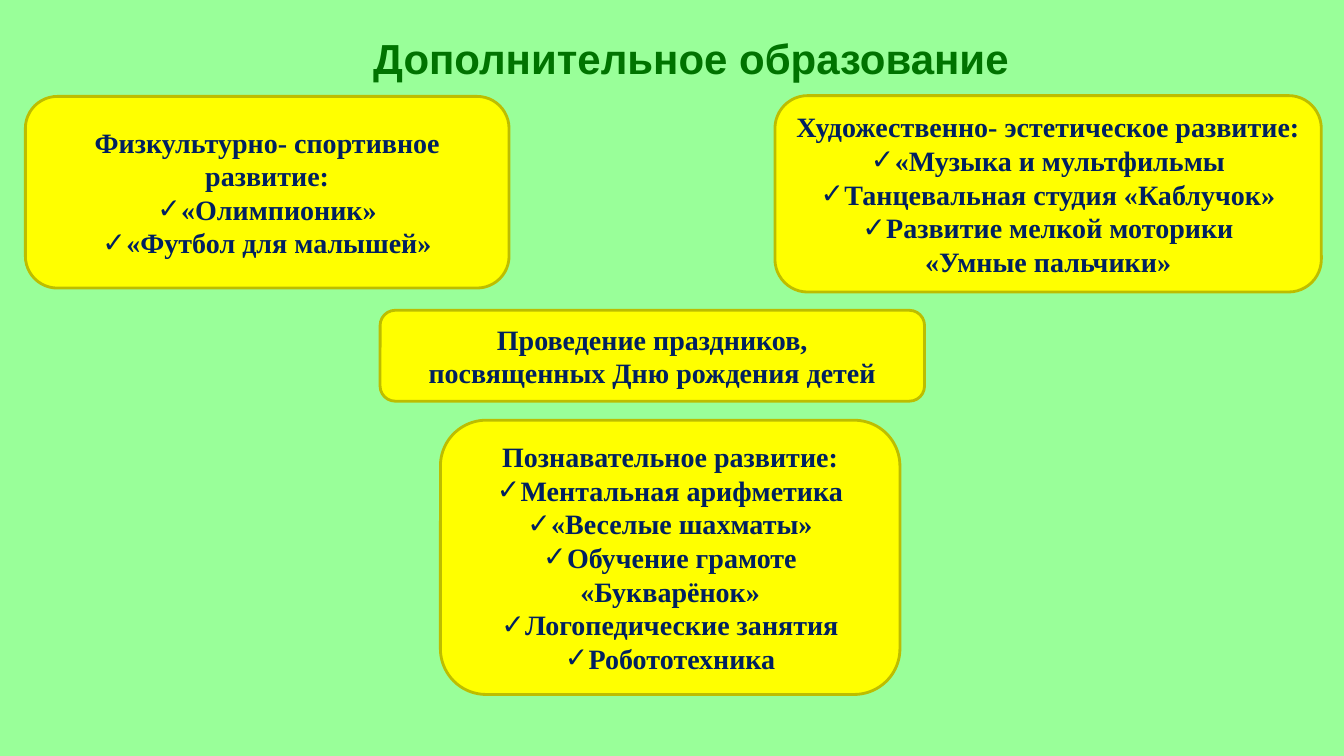
from dataclasses import dataclass

from lxml.etree import SubElement
from pptx import Presentation
from pptx.dml.color import RGBColor
from pptx.enum.shapes import MSO_SHAPE as Preset
from pptx.enum.text import MSO_ANCHOR as Anchor, PP_ALIGN as Align
from pptx.oxml.ns import qn
from pptx.util import Cm, Pt

MINT = RGBColor(0x99, 0xFF, 0x99)
GREEN = RGBColor(0x00, 0x73, 0x00)
YELLOW = RGBColor(0xFF, 0xFF, 0x00)
OLIVE = RGBColor(0xBD, 0xBD, 0x00)
NAVY = RGBColor(0x00, 0x20, 0x60)
CHECK = "✓"


@dataclass(frozen=True)
class Card:
    """A yellow box; lines that start with the check mark are list items."""
    left: float
    top: float
    width: float
    height: float
    lines: tuple[str, ...]


CARDS = (
    Card(0.64, 2.43, 12.19, 4.83, (
        "Физкультурно- спортивное развитие:",
        "✓«Олимпионик»",
        "✓«Футбол для малышей»",
    )),
    Card(19.53, 2.41, 13.77, 4.95, (
        "Художественно- эстетическое развитие:",
        "✓«Музыка и мультфильмы",
        "✓Танцевальная студия «Каблучок»",
        "✓Развитие мелкой моторики",
        "«Умные пальчики»",
    )),
    Card(11.1, 10.59, 11.58, 6.91, (
        "Познавательное развитие:",
        "✓Ментальная арифметика",
        "✓«Веселые шахматы»",
        "✓Обучение грамоте «Букварёнок»",
        "✓Логопедические занятия",
        "✓Робототехника",
    )),
    Card(9.58, 7.82, 13.72, 2.29, (
        "Проведение праздников,",
        "посвященных Дню рождения детей",
    )),
)


def write(para, text: str, *, font: str, size: float, color: RGBColor) -> None:
    para.alignment = Align.CENTER
    span = para.add_run()
    span.text = text
    span.font.name = font
    span.font.size = Pt(size)
    span.font.bold = True
    span.font.color.rgb = color


def add_check(para) -> None:
    properties = para._p.get_or_add_pPr()
    SubElement(properties, qn("a:buFont"), typeface="Arial")
    SubElement(properties, qn("a:buChar"), char=CHECK)


def add_title(page, text: str) -> None:
    title = page.shapes.title
    title.left, title.top, title.width, title.height = Cm(2.18), Cm(0.69), Cm(30.48), Cm(1.55)
    title.text_frame.vertical_anchor = Anchor.MIDDLE
    write(title.text_frame.paragraphs[0], text, font="Arial", size=30, color=GREEN)


def add_card(page, card: Card) -> None:
    box = page.shapes.add_shape(Preset.ROUNDED_RECTANGLE, Cm(card.left), Cm(card.top),
                                Cm(card.width), Cm(card.height))
    box.shadow.inherit = False
    box.fill.solid()
    box.fill.fore_color.rgb = YELLOW
    box.line.color.rgb = OLIVE
    box.line.width = Pt(2)
    frame = box.text_frame
    frame.word_wrap = True
    frame.vertical_anchor = Anchor.MIDDLE
    for index, line in enumerate(card.lines):
        para = frame.add_paragraph() if index else frame.paragraphs[0]
        if line.startswith(CHECK):
            add_check(para)
        write(para, line.removeprefix(CHECK), font="Times New Roman", size=20, color=NAVY)


def main() -> None:
    deck = Presentation()
    deck.slide_width, deck.slide_height = Cm(33.87), Cm(19.05)
    page = deck.slides.add_slide(deck.slide_layouts[5])
    page.background.fill.solid()
    page.background.fill.fore_color.rgb = MINT
    add_title(page, "Дополнительное образование")
    for card in CARDS:
        add_card(page, card)
    deck.save("out.pptx")


if __name__ == "__main__":
    main()
